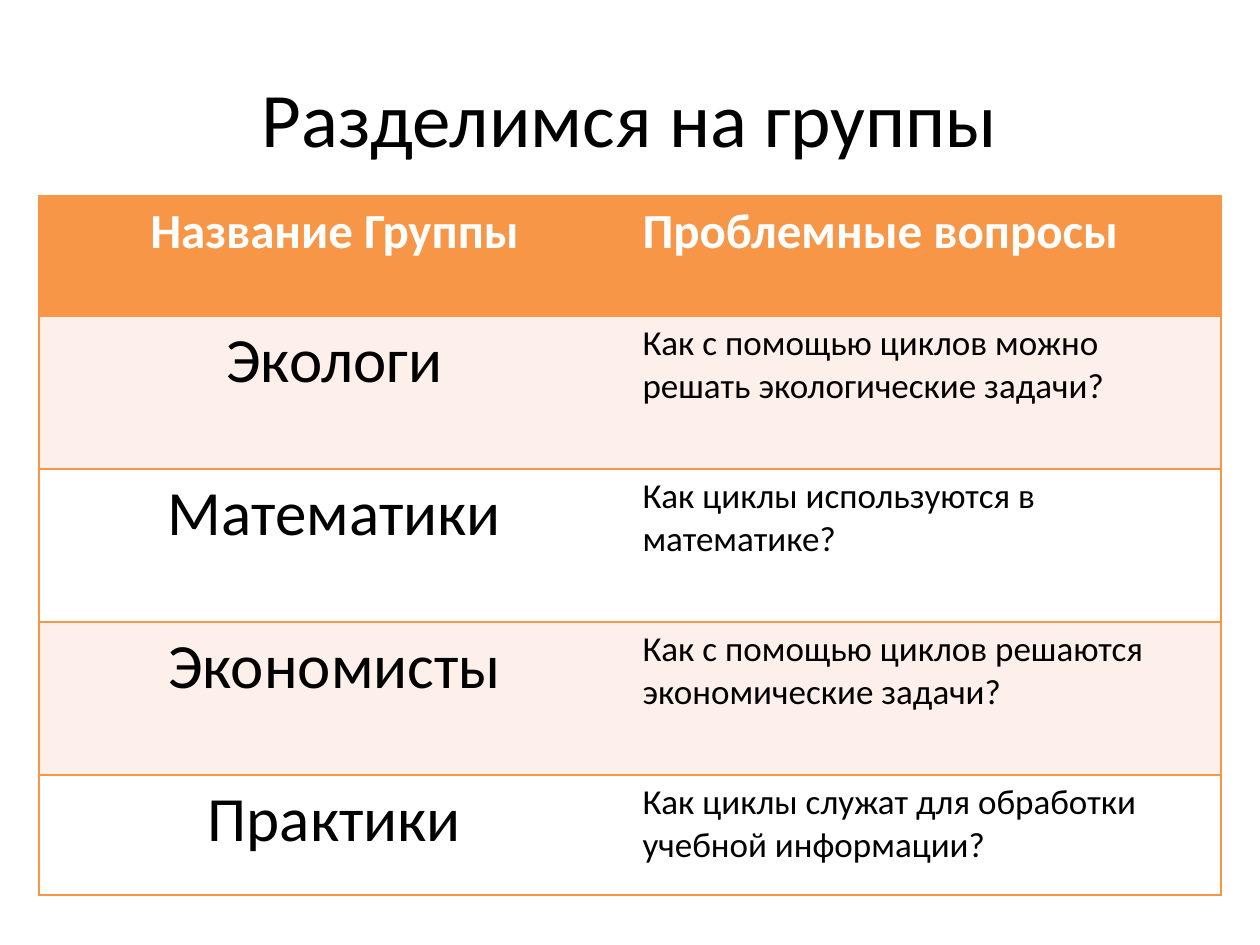
from dataclasses import dataclass

from lxml.etree import SubElement
from pptx import Presentation
from pptx.dml.color import RGBColor
from pptx.enum.text import MSO_ANCHOR, PP_ALIGN
from pptx.oxml.ns import qn
from pptx.util import Emu, Pt

PX_PER_INCH = 126
FONT = "Calibri"
ORANGE = RGBColor(0xF7, 0x96, 0x46)
PEACH = RGBColor(0xFD, 0xEF, 0xE9)
WHITE = RGBColor(0xFF, 0xFF, 0xFF)
BLACK = RGBColor(0x00, 0x00, 0x00)

COLUMN_WIDTH = 591
BORDER_WIDTH = Pt(1)


@dataclass(frozen=True)
class TextStyle:
    size: int
    color: RGBColor = BLACK
    bold: bool = False
    align: PP_ALIGN = PP_ALIGN.LEFT


@dataclass(frozen=True)
class Row:
    group: str
    question: str
    height: int
    fill: RGBColor
    styles: tuple[TextStyle, TextStyle]


TITLE = TextStyle(44, align=PP_ALIGN.CENTER)
HEADER = (TextStyle(28, WHITE, True, PP_ALIGN.CENTER), TextStyle(28, WHITE, True))
BODY = (TextStyle(36, align=PP_ALIGN.CENTER), TextStyle(20))

ROWS = [
    Row("Название Группы", "Проблемные вопросы", 120, ORANGE, HEADER),
    Row("Экологи", "Как с помощью циклов можно решать экологические задачи?", 153, PEACH, BODY),
    Row("Математики", "Как циклы используются в математике?", 153, WHITE, BODY),
    Row("Экономисты", "Как с помощью циклов решаются экономические задачи?", 153, PEACH, BODY),
    Row("Практики", "Как циклы служат для обработки учебной информации?", 120, WHITE, BODY),
]


def px(length: int) -> Emu:
    return Emu(round(length * 914400 / PX_PER_INCH))


def write_text(frame, text: str, style: TextStyle) -> None:
    para = frame.paragraphs[0]
    para.alignment = style.align
    span = para.add_run()
    span.text = text
    formats = {"name": FONT, "size": Pt(style.size), "bold": style.bold}
    for name, value in formats.items():
        setattr(span.font, name, value)
    span.font.color.rgb = style.color


def set_borders(cell, visible: dict[str, bool]) -> None:
    """Draw the visible sides in orange and hide the others."""
    properties = cell._tc.get_or_add_tcPr()
    for position, (side, shown) in enumerate(visible.items()):
        line = SubElement(properties, qn(f"a:ln{side}"), w=str(BORDER_WIDTH))
        if shown:
            fill = SubElement(line, qn("a:solidFill"))
            SubElement(fill, qn("a:srgbClr"), val=str(ORANGE))
        else:
            SubElement(line, qn("a:noFill"))
        properties.insert(position, line)


def add_title(slide, text: str) -> None:
    box = slide.shapes.add_textbox(px(63), px(38), px(1134), px(157))
    box.text_frame.word_wrap = True
    box.text_frame.vertical_anchor = MSO_ANCHOR.MIDDLE
    write_text(box.text_frame, text, TITLE)


def add_group_table(slide, rows: list[Row]) -> None:
    total_height = sum(row.height for row in rows)
    table = slide.shapes.add_table(
        len(rows), 2, px(39), px(196), px(2 * COLUMN_WIDTH), px(total_height)
    ).table
    for flag in ("first_row", "horz_banding"):
        setattr(table, flag, False)
    for column in table.columns:
        column.width = px(COLUMN_WIDTH)
    for row_index, row in enumerate(rows):
        table.rows[row_index].height = px(row.height)
        for column_index, text in enumerate((row.group, row.question)):
            cell = table.cell(row_index, column_index)
            cell.fill.solid()
            cell.fill.fore_color.rgb = row.fill
            write_text(cell.text_frame, text, row.styles[column_index])
            is_left = column_index == 0
            set_borders(cell, {"L": is_left, "R": not is_left, "T": True, "B": True})


def main() -> None:
    deck = Presentation()
    deck.slide_width, deck.slide_height = px(1260), px(945)
    slide = deck.slides.add_slide(deck.slide_layouts[6])
    add_title(slide, "Разделимся на группы")
    add_group_table(slide, ROWS)
    deck.save("out.pptx")


if __name__ == "__main__":
    main()
